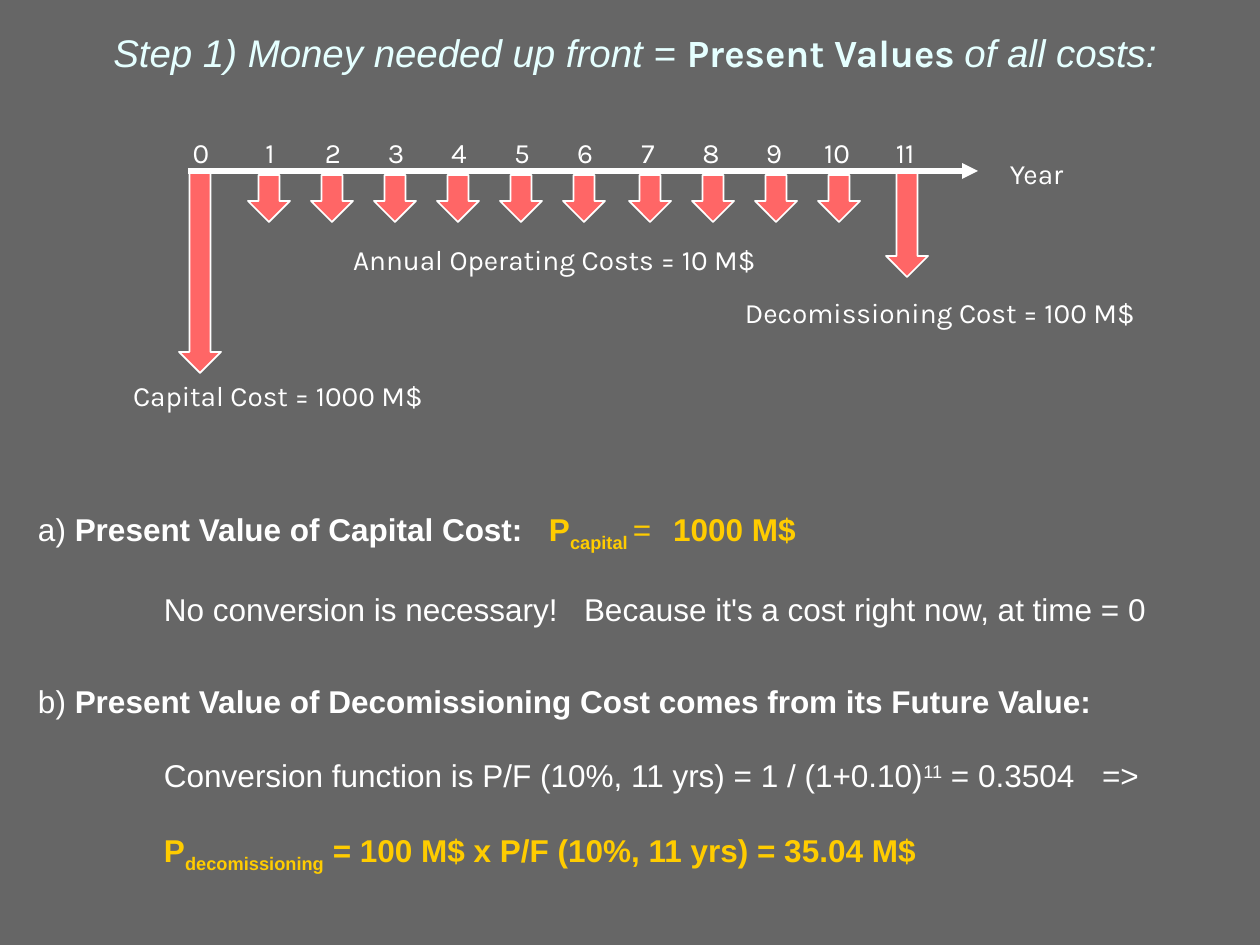
from typing import NamedTuple

from lxml.etree import SubElement as Sub
from pptx import Presentation
from pptx.dml.color import RGBColor as Rgb
from pptx.enum.shapes import MSO_CONNECTOR as Conn, MSO_SHAPE as Kind
from pptx.enum.text import MSO_ANCHOR as Anchor, PP_ALIGN as Align
from pptx.oxml.ns import qn
from pptx.util import Emu, Pt

GREY = Rgb(0x66, 0x66, 0x66)
WHITE = Rgb(0xFF, 0xFF, 0xFF)
PALE = Rgb(0xE5, 0xFF, 0xFF)
GOLD = Rgb(0xFF, 0xCC, 0x00)
RED = Rgb(0xFF, 0x66, 0x66)
SANS, KARLA = "Arial", "Karla"
SCALE = 914400 / 126
PAD = 6


class Box(NamedTuple):
    left: int
    top: int
    wide: int
    high: int


class Run(NamedTuple):
    text: str
    color: Rgb = WHITE
    bold: bool = False
    italic: bool = False
    base: int = 0
    face: str = SANS
    size: int = 18


class Para(NamedTuple):
    runs: list[Run]
    gap: int = 0
    tabs: tuple[int, ...] = ()


class Label(NamedTuple):
    text: str
    box: Box
    align: Align = Align.CENTER


def px(size: int) -> Emu:
    return Emu(round(size * SCALE))


def place(box: Box) -> list[Emu]:
    return [px(size) for size in box]


def write(shapes, box: Box, paras: list[Para], align=Align.LEFT, anchor=Anchor.TOP) -> None:
    frame = shapes.add_textbox(*place(box)).text_frame
    frame.word_wrap = True
    frame.vertical_anchor = anchor
    frame.margin_left = frame.margin_right = px(PAD)
    frame.margin_top = frame.margin_bottom = px(PAD)
    for spot, para in enumerate(paras):
        line = frame.add_paragraph() if spot else frame.paragraphs[0]
        line.alignment = align
        if para.gap:
            line.space_before = Pt(para.gap)
        if para.tabs:
            stops = Sub(line._p.get_or_add_pPr(), qn("a:tabLst"))
            for stop in para.tabs:
                Sub(stops, qn("a:tab"), pos=str(px(stop)), algn="l")
        for run in para.runs:
            part = line.add_run()
            part.text = run.text
            font = part.font
            font.name, font.size = run.face, Pt(run.size)
            font.bold, font.italic = run.bold, run.italic
            font.color.rgb = run.color
            if run.base:
                part._r.get_or_add_rPr().set("baseline", str(run.base * 1000))


def label(shapes, item: Label) -> None:
    write(shapes, item.box, [Para([Run(item.text, face=KARLA, size=16)])], item.align)


def arrow(shapes, box: Box) -> None:
    shape = shapes.add_shape(Kind.DOWN_ARROW, *place(box))
    shape.shadow.inherit = False
    shape.fill.solid()
    shape.fill.fore_color.rgb = RED
    shape.line.color.rgb = WHITE
    shape.line.width = Pt(1)


def axis(shapes, left: int, right: int, y: int) -> None:
    line = shapes.add_connector(Conn.STRAIGHT, px(left), px(y), px(right), px(y))
    line.line.color.rgb = WHITE
    line.line.width = Pt(3)
    Sub(line.line._get_or_add_ln(), qn("a:tailEnd"), type="triangle")
    Sub(line._element.spPr, qn("a:effectLst"))


TITLE = [Para([
    Run("Step 1) Money needed up front = ", PALE, italic=True, size=22),
    Run("Present Values ", PALE, bold=True, face=KARLA, size=22),
    Run("of all costs:", PALE, italic=True, size=22),
])]

BODY = [
    Para([
        Run("a) "),
        Run("Present Value of Capital Cost:", bold=True),
        Run("\tP", GOLD, bold=True),
        Run("capital ", GOLD, bold=True, base=-25),
        Run("=", GOLD),
        Run("\t1000 M$", GOLD, bold=True),
    ], tabs=(511, 635)),
    Para([
        Run("\tNo conversion is necessary!"),
        Run("\tBecause it's a cost right now, at time = 0"),
    ], 21, (126, 546)),
    Para([
        Run("b) "),
        Run("Present Value of Decomissioning Cost comes from its Future Value:", bold=True),
    ], 31),
    Para([
        Run("\tConversion function is P/F (10%, 11 yrs) = 1 / (1+0.10)"),
        Run("11", base=30),
        Run(" = 0.3504"),
        Run("\t=>"),
    ], 21, (126, 1064)),
    Para([
        Run("\tP", GOLD, bold=True),
        Run("decomissioning", GOLD, bold=True, base=-25),
        Run(" = 100 M$ x P/F (10%, 11 yrs) = 35.04 M$", GOLD, bold=True),
    ], 21, (126,)),
]

LABELS = [
    Label("Decomissioning Cost = 100 M$", Box(693, 290, 494, 45)),
    Label("Capital Cost = 1000 M$", Box(105, 373, 346, 45)),
    Label("Annual Operating Costs = 10 M$", Box(206, 237, 697, 45)),
    Label("Year", Box(1004, 151, 105, 45), Align.LEFT),
]

LAST, STEP, WIDE = 11, 63, 42


def main() -> None:
    deck = Presentation()
    deck.slide_width, deck.slide_height = px(1260), px(945)
    slide = deck.slides.add_slide(deck.slide_layouts[6])
    slide.background.fill.solid()
    slide.background.fill.fore_color.rgb = GREY

    write(slide.shapes, Box(32, 504, 1228, 378), BODY)
    write(slide.shapes, Box(5, 10, 1260, 84), TITLE, Align.CENTER, Anchor.MIDDLE)

    chart = slide.shapes.add_group_shape().shapes
    axis(chart, 188, 978, 171)
    arrow(chart, Box(179, 173, WIDE, 200))
    arrow(chart, Box(886, 173, WIDE, 104))
    for year in range(1, LAST):
        shift = 3 if year > 6 else 0
        arrow(chart, Box(248 + STEP * (year - 1) + shift, 175, WIDE, 47))
    for item in LABELS:
        label(chart, item)
    ends = {0: 201, LAST: 905}
    for year in range(LAST + 1):
        mid = ends.get(year, 270 + STEP * (year - 1))
        label(chart, Label(str(year), Box(mid - 35, 130, 70, 45)))

    deck.save("out.pptx")


if __name__ == "__main__":
    main()
